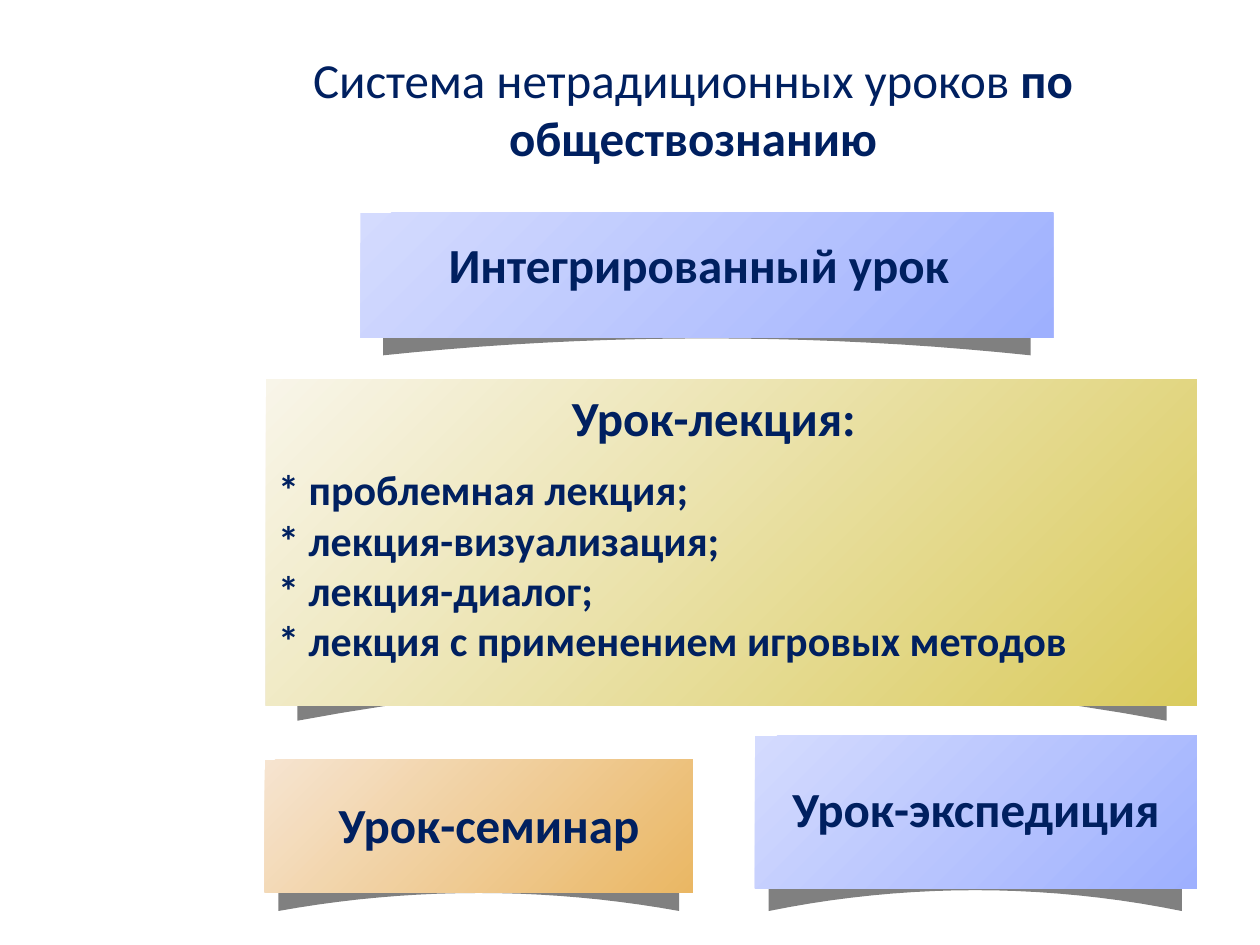
from pptx import Presentation
from pptx.dml.color import RGBColor
from pptx.enum.shapes import MSO_SHAPE
from pptx.enum.text import MSO_ANCHOR, PP_ALIGN
from pptx.util import Inches, Pt

NAVY = "002060"
GRAY = "808080"
BLUE = ("D4DBFE", "9EB0FE")
YELLOW = ("F8F5E9", "DACB5E")
ORANGE = ("F6E4D0", "EAB764")
CURVE_STEPS = 10


def color(value):
    return RGBColor.from_string(value)


def style_paragraph(paragraph, size, alignment):
    paragraph.alignment = alignment
    paragraph.font.name = "Calibri"
    paragraph.font.size = Pt(size)
    paragraph.font.color.rgb = color(NAVY)


def add_curved_shadow(group, left, top, width, height):
    def point(across, down):
        return (Inches(left + width * (1 + across) / 2),
                Inches(top + height * down))

    positions = [1 - step / CURVE_STEPS for step in range(2 * CURVE_STEPS + 1)]
    outline = [point(across, 0.72 + 0.28 * across ** 2) for across in positions]
    outline += [point(-1, 0.25), point(0, 0), point(1, 0.25)]
    builder = group.shapes.build_freeform(*outline[0])
    builder.add_line_segments(outline[1:], close=True)
    shadow = builder.convert_to_shape()
    shadow.shadow.inherit = False
    shadow.fill.solid()
    shadow.fill.fore_color.rgb = color(GRAY)
    shadow.line.fill.background()


def add_card(slide, box, shadow_box, colors):
    group = slide.shapes.add_group_shape()
    add_curved_shadow(group, *shadow_box)
    card = group.shapes.add_shape(MSO_SHAPE.RECTANGLE, *map(Inches, box))
    card.shadow.inherit = False
    card.line.fill.background()
    card.fill.gradient()
    card.fill.gradient_angle = 315
    for stop, value in zip(card.fill.gradient_stops, colors):
        stop.color.rgb = color(value)
    return card


def add_heading(slide, box, runs, wrap=True):
    text_frame = slide.shapes.add_textbox(*map(Inches, box)).text_frame
    text_frame.word_wrap = wrap
    paragraph = text_frame.paragraphs[0]
    style_paragraph(paragraph, 28, PP_ALIGN.CENTER)
    for text, bold in runs:
        run = paragraph.add_run()
        run.text = text
        run.font.bold = bold


def add_lecture_list(card, items):
    text_frame = card.text_frame
    text_frame.word_wrap = True
    text_frame.vertical_anchor = MSO_ANCHOR.TOP
    text_frame.margin_top = Inches(0.67)
    text_frame.text = "\n".join(items)
    for paragraph in text_frame.paragraphs:
        style_paragraph(paragraph, 24, PP_ALIGN.LEFT)
        paragraph.font.bold = True


def build_slide(presentation):
    slide = presentation.slides.add_slide(presentation.slide_layouts[6])

    add_card(slide, (2.1, 6.03, 3.4, 1.05), (2.21, 6.72, 3.18, 0.51), ORANGE)
    lecture = add_card(slide, (2.11, 3.01, 7.39, 2.59),
                       (2.36, 4.57, 6.9, 1.15), YELLOW)
    add_lecture_list(lecture, [
        "* проблемная лекция;",
        "* лекция-визуализация;",
        "* лекция-диалог;",
        "* лекция с применением игровых методов",
    ])
    add_card(slide, (2.86, 1.69, 5.5, 0.99), (3.04, 2.34, 5.14, 0.48), BLUE)
    add_card(slide, (5.99, 5.84, 3.51, 1.21), (6.1, 6.64, 3.28, 0.59), BLUE)

    add_heading(slide, (1.3, 0.34, 8.4, 1.92),
                [("Система нетрадиционных уроков ", False),
                 ("по обществознанию", True)])
    add_heading(slide, (2.83, 1.81, 5.43, 0.57), [("Интегрированный урок", True)])
    add_heading(slide, (2.1, 3.03, 7.13, 0.57), [("Урок-лекция:", True)])
    add_heading(slide, (2.57, 6.26, 2.62, 0.57), [("Урок-семинар", True)], wrap=False)
    add_heading(slide, (6.17, 6.13, 3.15, 0.57), [("Урок-экспедиция", True)], wrap=False)


def main():
    presentation = Presentation()
    presentation.slide_width = Inches(10)
    presentation.slide_height = Inches(7.5)
    build_slide(presentation)
    presentation.save("out.pptx")


if __name__ == "__main__":
    main()
